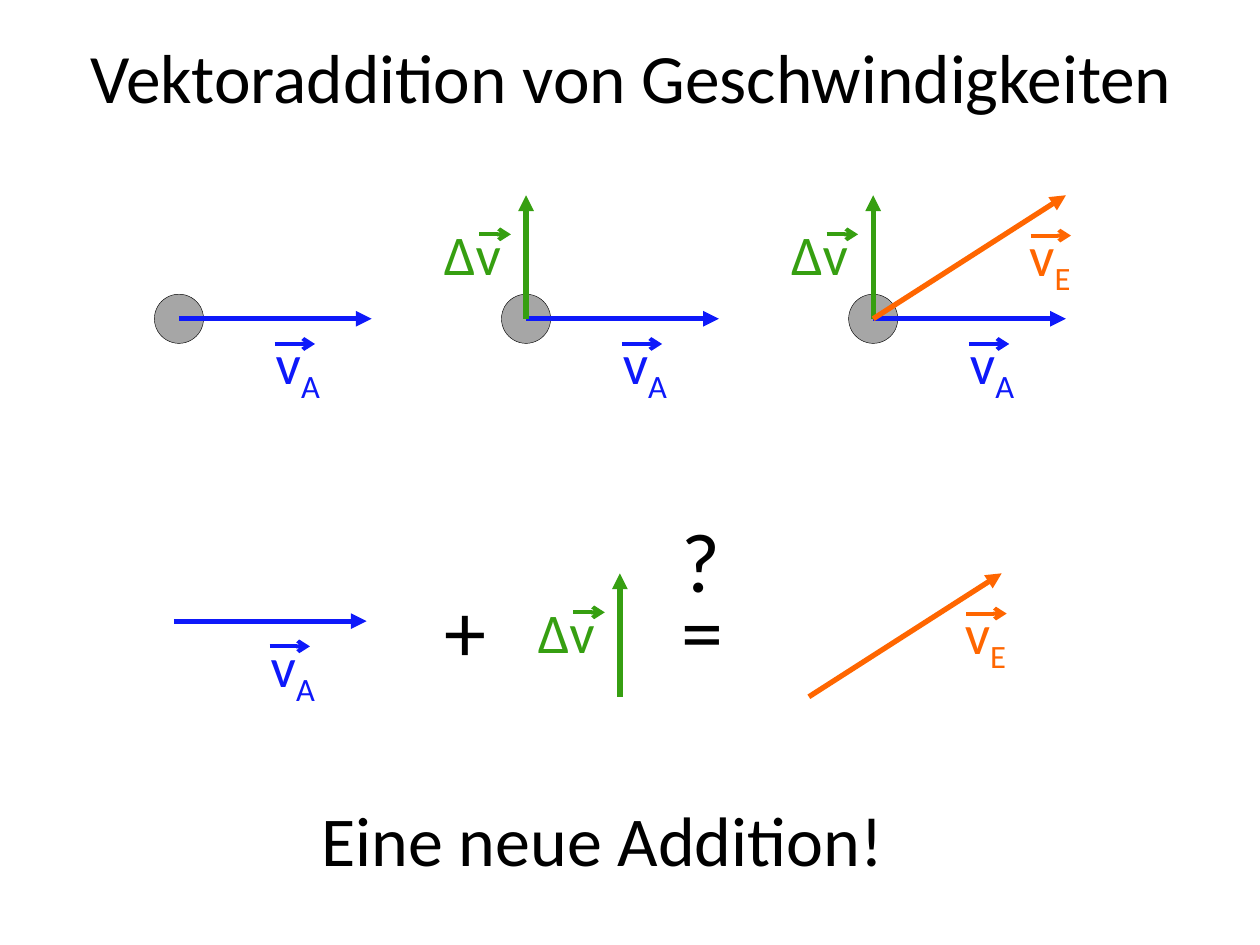
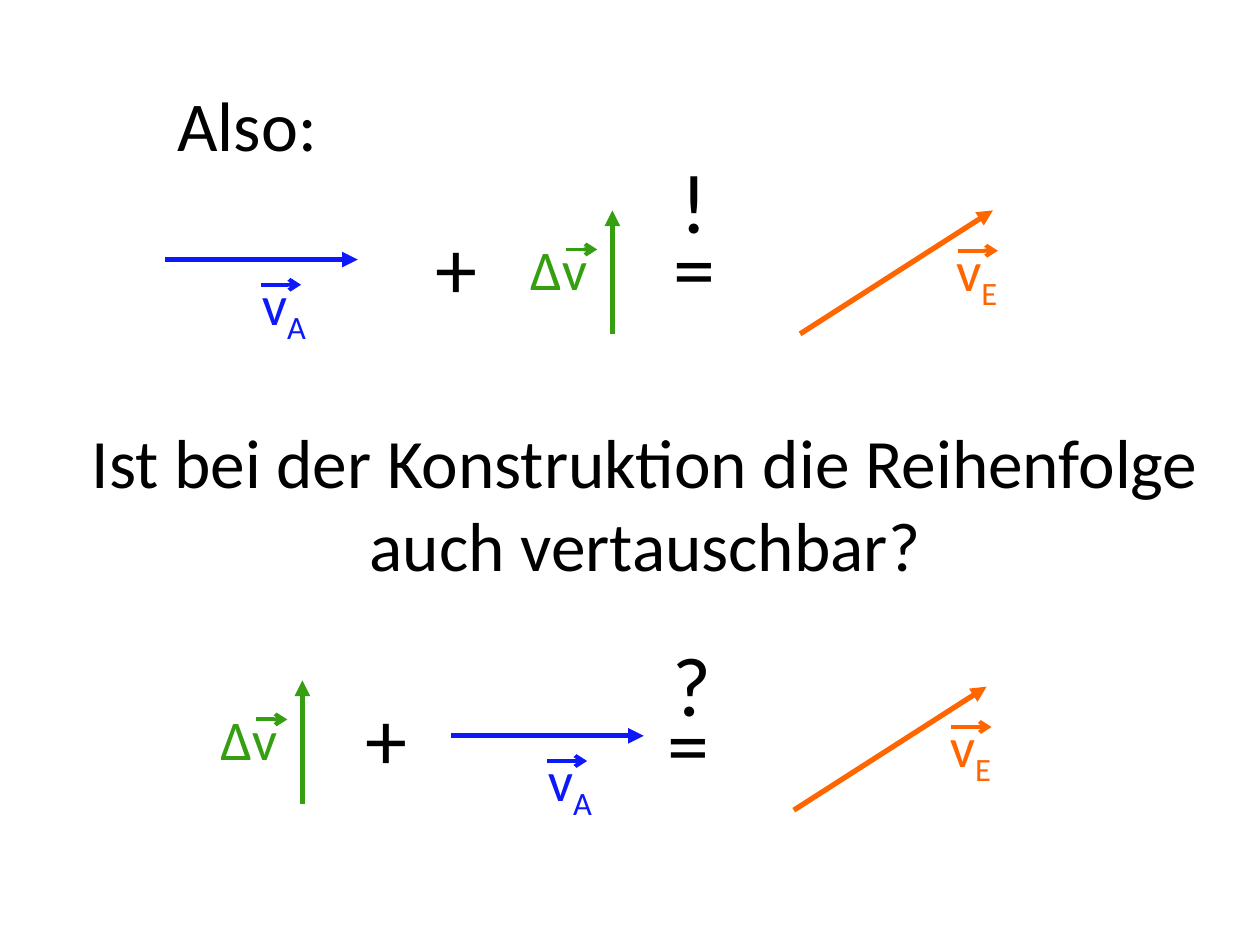
"""Build two slides on adding velocity vectors."""
from lxml import etree
from pptx import Presentation
from pptx import util as u
from pptx.dml.color import RGBColor
from pptx.enum import shapes, text
from pptx.oxml.ns import qn

COLS, ROWS = 10, 7.5
FONT = "Calibri"
BLACK, GREY, BLUE, GREEN, ORANGE = "000000", "A6A6A6", "0E19FA", "369F11", "FF6600"
VECS = {
    "A": dict(name="v", sub="A", color=BLUE, step=(1.53, 0),
              label=(0.67, 0.03, 0.94), bar=(0.76, 0.2, 0.32)),
    "D": dict(name="Δv", sub="", color=GREEN, step=(0, -0.98),
              label=(-0.75, -0.84, 0.75), bar=(-0.37, -0.67, 0.25)),
    "E": dict(name="v", sub="E", color=ORANGE, step=(1.53, -0.98),
              label=(1.14, -0.83, 0.94), bar=(1.25, -0.66, 0.32)),
}


def rgb(code):
    """Turn a hex string into a colour."""
    return RGBColor.from_string(code)


def write(frame, words, size=40, color=BLACK, sub="", align="LEFT", anchor="TOP"):
    """Fill a text frame with words and an optional subscript."""
    frame.word_wrap = True
    frame.vertical_anchor = getattr(text.MSO_ANCHOR, anchor)
    para = frame.paragraphs[0]
    para.alignment = getattr(text.PP_ALIGN, align)
    for part in filter(None, (words, sub)):
        run = para.add_run()
        run.text = part
        run.font.name, run.font.size = FONT, u.Pt(size)
        run.font.color.rgb = rgb(color)
    if sub:
        run._r.get_or_add_rPr().set("baseline", "-25000")


class Deck:
    """Hold the grid and the current slide."""

    def __init__(self):
        """Open an empty deck."""
        self.prs = Presentation()
        self.prs.slide_width, self.prs.slide_height = u.Inches(10), u.Inches(7.5)
        self.col = self.prs.slide_width / COLS
        self.row = self.prs.slide_height / ROWS

    def page(self):
        """Start a blank slide."""
        self.slide = self.prs.slides.add_slide(self.prs.slide_layouts[6])

    def grid(self, *spots):
        """Turn alternating columns and rows into lengths."""
        return [round(s * (self.row if i % 2 else self.col)) for i, s in enumerate(spots)]

    def text(self, words, x, y, w, h, **form):
        """Place a text box."""
        box = self.slide.shapes.add_textbox(*self.grid(x, y, w, h))
        write(box.text_frame, words, **form)

    def title(self, words, x, y, h, size=39.6):
        """Place a wide centred line of text."""
        self.text(words, x, y, 9, h, size=size, align="CENTER", anchor="MIDDLE")

    def sign(self, mark, x, y):
        """Place a large operator."""
        self.text(mark, x, y, 0.71, 0.91, size=48)

    def arrow(self, x, y, dx, dy, color, width, head):
        """Draw an arrow from a point by a step."""
        line = self.slide.shapes.add_connector(
            shapes.MSO_CONNECTOR.STRAIGHT, *self.grid(x, y, x + dx, y + dy))
        line.line.color.rgb = rgb(color)
        line.line.width = u.Pt(width)
        etree.SubElement(line.line._get_or_add_ln(), qn("a:tailEnd"), type=head)
        etree.SubElement(line._element.spPr, qn("a:effectLst"))

    def vector(self, kind, x, y):
        """Draw a vector from its foot, with its label."""
        v = VECS[kind]
        self.arrow(x, y, *v["step"], v["color"], 3, "triangle")
        dx, dy, w = v["label"]
        self.text(v["name"], x + dx, y + dy, w, 0.64,
                  size=32, color=v["color"], sub=v["sub"])
        dx, dy, w = v["bar"]
        self.arrow(x + dx, y + dy, w, 0, v["color"], 2.25, "arrow")

    def ball(self, x, y, size=0.39):
        """Draw a ball around a point."""
        dot = self.slide.shapes.add_shape(
            shapes.MSO_SHAPE.OVAL, *self.grid(x - size / 2, y - size / 2, size, size))
        dot.shadow.inherit = False
        dot.fill.solid()
        dot.fill.fore_color.rgb = rgb(GREY)
        dot.line.color.rgb = rgb(BLACK)
        dot.line.width = u.Pt(0.25)

    def sum(self, vectors, signs):
        """Draw an equation of vectors and signs."""
        for kind, x, y in vectors:
            self.vector(kind, x, y)
        for mark, x, y in signs:
            self.sign(mark, x, y)


def main():
    """Build both slides and save them."""
    deck = Deck()

    deck.page()
    deck.title("Vektoraddition von Geschwindigkeiten", 0.51, 0.21, 0.79)
    for i, kinds in enumerate(("A", "AD", "ADE")):
        x, y = 1.42 + 2.755 * i, 2.53
        deck.ball(x, y)
        for kind in kinds:
            deck.vector(kind, x, y)
    deck.sum([("A", 1.38, 4.93), ("D", 4.92, 5.53), ("E", 6.42, 5.53)],
             [("+", 3.43, 4.54), ("=", 5.31, 4.54), ("?", 5.31, 3.99)])
    deck.title("Eine neue Addition!", 0.28, 6.03, 1.25, size=40)

    deck.page()
    deck.title("Ist bei der Konstruktion die Reihenfolge auch vertauschbar?", 0.62, 3.36, 1.25)
    deck.sum([("A", 1.31, 2.06), ("D", 4.86, 2.65), ("E", 6.35, 2.65)],
             [("+", 3.36, 1.66), ("=", 5.25, 1.66), ("!", 5.3, 1.14)])
    deck.sum([("A", 3.58, 5.84), ("D", 2.4, 6.38), ("E", 6.3, 6.43)],
             [("+", 2.8, 5.4), ("=", 5.2, 5.44), ("?", 5.24, 4.97)])
    deck.text("Also:", 1.31, 0.6, 1.84, 0.77)

    deck.prs.save("out.pptx")


if __name__ == "__main__":
    main()
